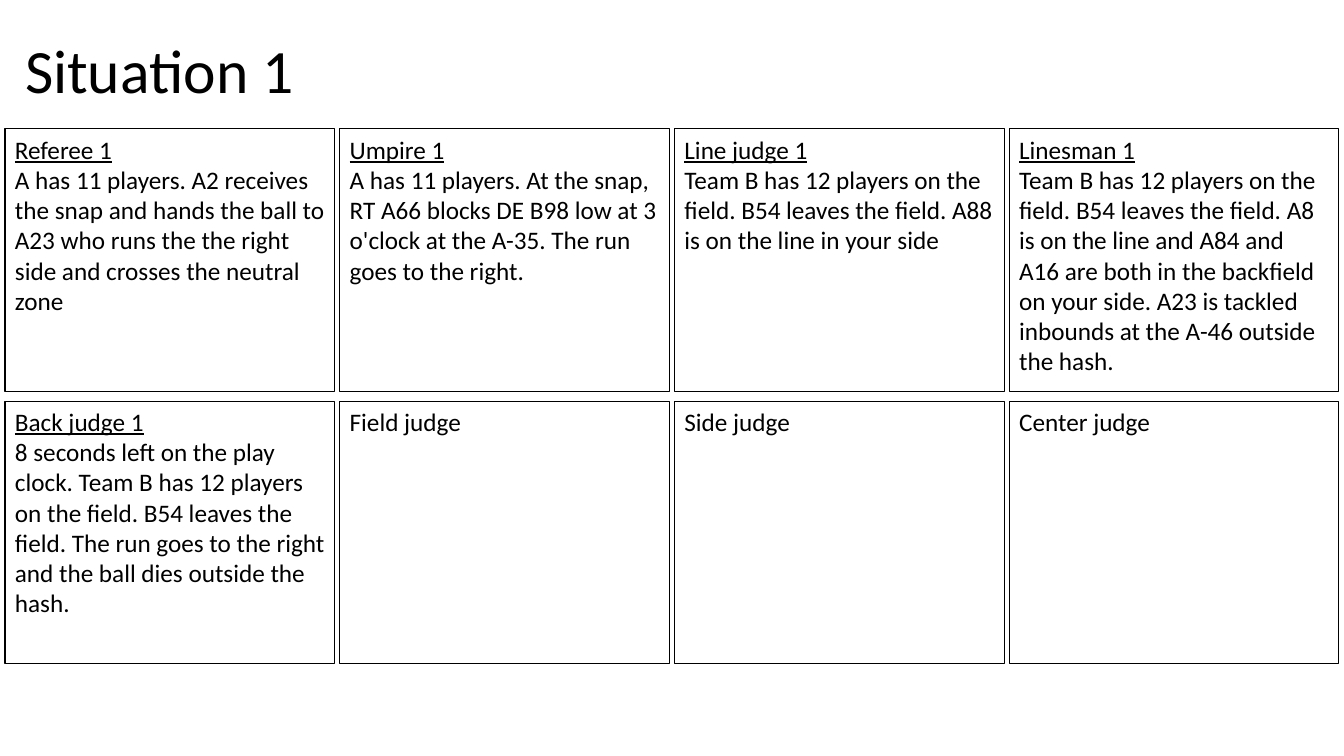
from pptx import Presentation
from pptx.dml.color import RGBColor
from pptx.enum import shapes, text
from pptx.util import Inches, Pt

COLUMNS = 4
CARD_W, CARD_H = 3.27, 2.6
LEFT, TOP = 0.05, 1.28
STEP_X, STEP_Y = 3.32, 2.7
BLACK = "000000"

CARDS = [
    ("Referee 1", "A has 11 players. A2 receives the snap and hands the ball to A23 "
     "who runs the the right side and crosses the neutral zone"),
    ("Umpire 1", "A has 11 players. At the snap, RT A66 blocks DE B98 low at 3 o'clock "
     "at the A-35. The run goes to the right."),
    ("Line judge 1", "Team B has 12 players on the field. B54 leaves the field. "
     "A88 is on the line in your side"),
    ("Linesman 1", "Team B has 12 players on the field. B54 leaves the field. "
     "A8 is on the line and A84 and A16 are both in the backfield on your side. "
     "A23 is tackled inbounds at the A-46 outside the hash."),
    ("Back judge 1", "8 seconds left on the play clock. Team B has 12 players on the field. "
     "B54 leaves the field. The run goes to the right and the ball dies outside the hash."),
    ("Field judge", ""),
    ("Side judge", ""),
    ("Center judge", ""),
]


def color(value):
    return RGBColor.from_string(value)


def write(p, content, size=18, underline=False, spacing=None):
    p.alignment = text.PP_ALIGN.LEFT
    p.line_spacing = spacing
    r = p.add_run()
    r.text = content
    r.font.name = "Calibri"
    r.font.size = Pt(size)
    r.font.underline = underline
    r.font.color.rgb = color(BLACK)


def add_title(s, content):
    sp = s.shapes.add_textbox(Inches(0.15), Inches(0), Inches(3.27), Inches(1.45))
    tf = sp.text_frame
    tf.word_wrap = True
    tf.vertical_anchor = text.MSO_ANCHOR.MIDDLE
    write(tf.paragraphs[0], content, size=44, spacing=0.9)


def add_card(s, x, y, official, description):
    """Add an outlined card; the heading is underlined when a description follows."""
    sp = s.shapes.add_shape(shapes.MSO_SHAPE.RECTANGLE, Inches(x), Inches(y),
                            Inches(CARD_W), Inches(CARD_H))
    sp.shadow.inherit = False
    sp.fill.background()
    sp.line.color.rgb = color(BLACK)
    sp.line.width = Pt(0.75)
    tf = sp.text_frame
    tf.word_wrap = True
    tf.vertical_anchor = text.MSO_ANCHOR.TOP
    write(tf.paragraphs[0], official, underline=bool(description))
    if description:
        write(tf.add_paragraph(), description)


def main():
    prs = Presentation()
    prs.slide_width, prs.slide_height = Inches(13.33), Inches(7.5)
    s = prs.slides.add_slide(prs.slide_layouts[6])
    add_title(s, "Situation 1")
    for i, (official, description) in enumerate(CARDS):
        row, col = divmod(i, COLUMNS)
        add_card(s, LEFT + col * STEP_X, TOP + row * STEP_Y, official, description)
    prs.save("out.pptx")


if __name__ == "__main__":
    main()
